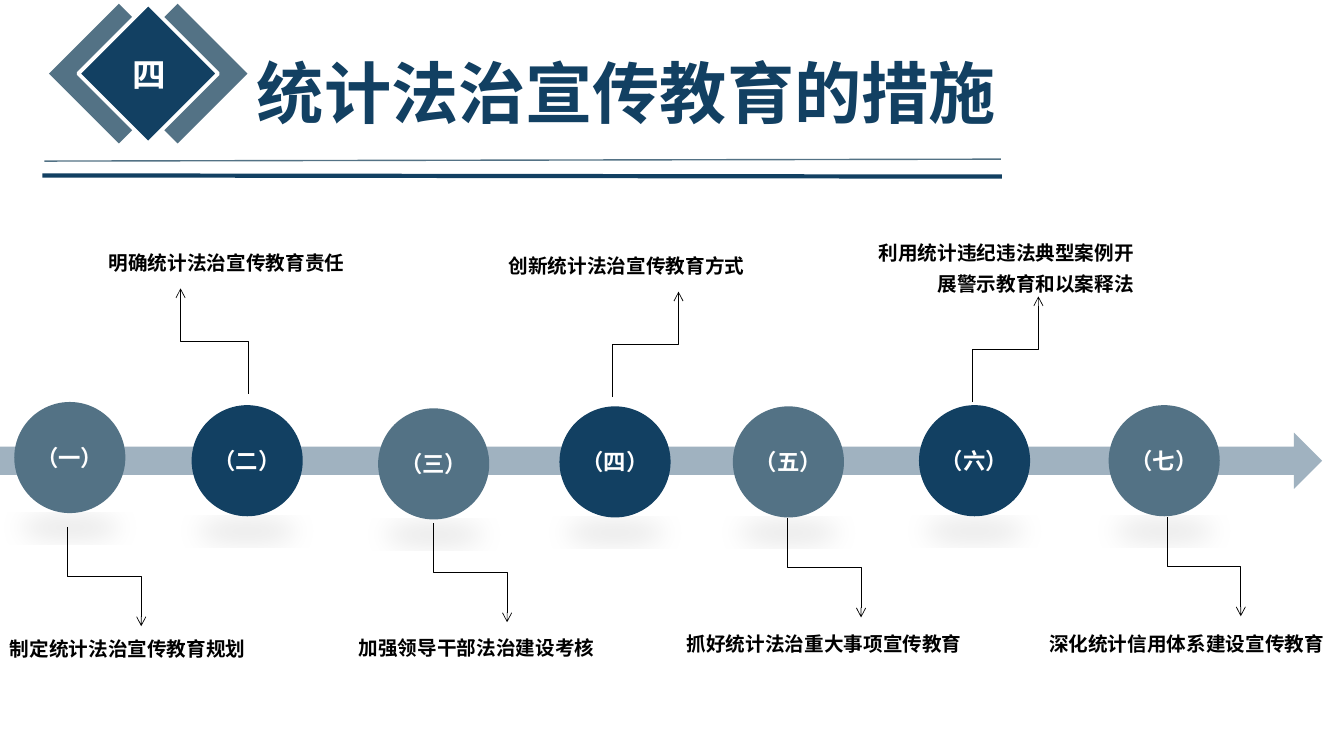
from dataclasses import dataclass

import pptx
import pptx.dml.color
import pptx.enum.shapes
import pptx.enum.text
import pptx.oxml
import pptx.oxml.ns
import pptx.util
from pptx.util import Cm

COLORS = {
    "navy": "124062",
    "slate": "537285",
    "white": "FFFFFF",
    "black": "000000",
}
FONT = "Noto Sans CJK SC"
NS = pptx.oxml.ns.nsdecls("a")
SHAPES = pptx.enum.shapes.MSO_SHAPE
CONNECTORS = pptx.enum.shapes.MSO_CONNECTOR
ALIGN = pptx.enum.text.PP_ALIGN
CIRCLE_SIZE = 2.8


@dataclass
class Measure:
    """One step of the timeline; lengths in cm, label_box is left, top, width, height."""
    number: str
    circle: tuple[float, float]
    arrow_start: tuple[float, float]
    arrow_step: tuple[float, float]
    label: str
    label_box: tuple[float, float, float, float]
    align: ALIGN = ALIGN.LEFT
    spacing: float = 1.3


DOWN = (1.86, 2.5)
UP_LEFT = (-1.7, -2.66)
UP_RIGHT = (1.66, -2.66)

MEASURES = [
    Measure("一", (0.36, 10.13), (1.7, 13.28), DOWN, "制定统计法治宣传教育规划",
            (0, 15.93, 7.01, 0.86), spacing=1.0),
    Measure("二", (4.83, 10.21), (6.25, 9.93), UP_LEFT, "明确统计法治宣传教育责任",
            (2.49, 6.2, 7.01, 0.86), spacing=1.0),
    Measure("三", (9.53, 10.29), (10.92, 13.18), DOWN, "加强领导干部法治建设考核",
            (8.79, 15.72, 7.01, 0.97)),
    Measure("四", (14.1, 10.24), (15.44, 10.01), UP_RIGHT, "创新统计法治宣传教育方式",
            (12.57, 6.1, 7.01, 0.97)),
    Measure("五", (18.47, 10.24), (19.84, 13.06), DOWN, "抓好统计法治重大事项宣传教育",
            (16.54, 15.62, 7.95, 1.04), ALIGN.RIGHT),
    Measure("六", (23.16, 10.21), (24.51, 10.13), UP_RIGHT,
            "利用统计违纪违法典型案例开展警示教育和以案释法",
            (21.82, 5.77, 7.01, 1.73), ALIGN.RIGHT),
    Measure("七", (27.94, 10.21), (29.41, 13.03), DOWN, "深化统计信用体系建设宣传教育",
            (26.19, 15.62, 7.67, 1.04)),
]


def rgb(color: str) -> pptx.dml.color.RGBColor:
    return pptx.dml.color.RGBColor.from_string(COLORS[color])


def write(shape, text: str, size: float, color: str, align=ALIGN.LEFT, spacing: float = 1.0):
    shape.text_frame.text = text
    paragraph = shape.text_frame.paragraphs[0]
    paragraph.alignment = align
    paragraph.line_spacing = spacing
    run = paragraph.runs[0]
    run.font.size = pptx.util.Pt(size)
    run.font.bold = True
    run.font.color.rgb = rgb(color)
    run.font.name = FONT
    run.font._element.append(pptx.oxml.parse_xml(f'<a:ea {NS} typeface="{FONT}"/>'))


def fit_to_text(shape, wrap: bool = True):
    frame = shape.text_frame
    frame.word_wrap = wrap
    frame.auto_size = pptx.enum.text.MSO_AUTO_SIZE.SHAPE_TO_FIT_TEXT
    frame.vertical_anchor = pptx.enum.text.MSO_ANCHOR.TOP


def add_filled(slide, kind, left: float, top: float, width: float, height: float, color: str):
    shape = slide.shapes.add_shape(kind, Cm(left), Cm(top), Cm(width), Cm(height))
    shape.shadow.inherit = False
    shape.fill.solid()
    shape.fill.fore_color.rgb = rgb(color)
    shape.line.fill.background()
    return shape


def add_line(slide, kind, begin: tuple, end: tuple, color: str, width: float):
    line = slide.shapes.add_connector(kind, *map(Cm, begin), *map(Cm, end))
    line.line.color.rgb = rgb(color)
    line.line.width = pptx.util.Pt(width)
    line._element.spPr.append(pptx.oxml.parse_xml(f"<a:effectLst {NS}/>"))
    return line


def add_step_arrow(slide, start: tuple, step: tuple):
    """Elbow arrow that leaves vertically: a horizontal elbow turned by 270 degrees."""
    half_x, half_y = step[0] / 2, step[1] / 2
    center_x, center_y = start[0] + half_x, start[1] + half_y
    arrow = add_line(slide, CONNECTORS.ELBOW,
                     (center_x + half_y, center_y - half_x),
                     (center_x - half_y, center_y + half_x), "black", 0.5)
    arrow._element.spPr.find(pptx.oxml.ns.qn("a:xfrm")).set("rot", "16200000")
    arrow.line._get_or_add_ln().append(
        pptx.oxml.parse_xml(f'<a:tailEnd {NS} type="arrow"/>'))


def add_floor_shadow(shape):
    effects = shape._element.spPr.find(pptx.oxml.ns.qn("a:effectLst"))
    effects.append(pptx.oxml.parse_xml(
        f'<a:outerShdw {NS} blurRad="241300" dist="38100" dir="5400000" sx="90000" '
        'sy="-19000" algn="b" rotWithShape="0"><a:srgbClr val="000000">'
        '<a:alpha val="10000"/></a:srgbClr></a:outerShdw>'))


def add_header(slide):
    add_line(slide, CONNECTORS.STRAIGHT, (25.22, 4.01), (1.12, 4.06), "slate", 1)
    for left, color in ((3.23, "slate"), (1.75, "slate"), (2.49, "navy")):
        diamond = add_filled(slide, SHAPES.ROUNDED_RECTANGLE, left, 0.61, 2.49, 2.49, color)
        diamond.adjustments[0] = 0
        diamond.rotation = 45
    diamond.line.color.rgb = rgb("white")
    diamond.line.width = pptx.util.Pt(2.75)
    add_line(slide, CONNECTORS.STRAIGHT, (25.25, 4.45), (1.07, 4.42), "navy", 3)

    title = slide.shapes.title
    title.left, title.top, title.width, title.height = map(Cm, (6.22, 1.17, 19.76, 2.31))
    write(title, "统计法治宣传教育的措施", 48, "navy")
    fit_to_text(title)

    section = slide.shapes.add_textbox(Cm(3.07), Cm(1.24), Cm(1.37), Cm(1.27))
    write(section, "四", 24, "white", ALIGN.CENTER)
    fit_to_text(section, wrap=False)


def add_measure(slide, measure: Measure, color: str):
    circle = add_filled(slide, SHAPES.OVAL, *measure.circle, CIRCLE_SIZE, CIRCLE_SIZE, color)
    add_floor_shadow(circle)
    circle.text_frame.margin_left = circle.text_frame.margin_right = 0
    circle.text_frame.vertical_anchor = pptx.enum.text.MSO_ANCHOR.MIDDLE
    write(circle, f"（{measure.number}）", 16, "white", ALIGN.CENTER)

    label = slide.shapes.add_textbox(*map(Cm, measure.label_box))
    write(label, measure.label, 14, "black", measure.align, measure.spacing)
    fit_to_text(label)
    add_step_arrow(slide, measure.arrow_start, measure.arrow_step)


def main():
    deck = pptx.Presentation()
    deck.slide_width, deck.slide_height = Cm(33.87), Cm(19.05)
    slide = deck.slides.add_slide(deck.slide_layouts.get_by_name("Title Only"))
    add_header(slide)

    timeline = add_filled(slide, SHAPES.RIGHT_ARROW, 0, 10.9, 33.32, 1.42, "navy")
    timeline_color = timeline._element.spPr.find(".//" + pptx.oxml.ns.qn("a:srgbClr"))
    timeline_color.append(pptx.oxml.parse_xml(f'<a:alpha {NS} val="40000"/>'))

    for index, measure in enumerate(MEASURES):
        add_measure(slide, measure, ("slate", "navy")[index % 2])
    deck.save("out.pptx")


if __name__ == "__main__":
    main()
